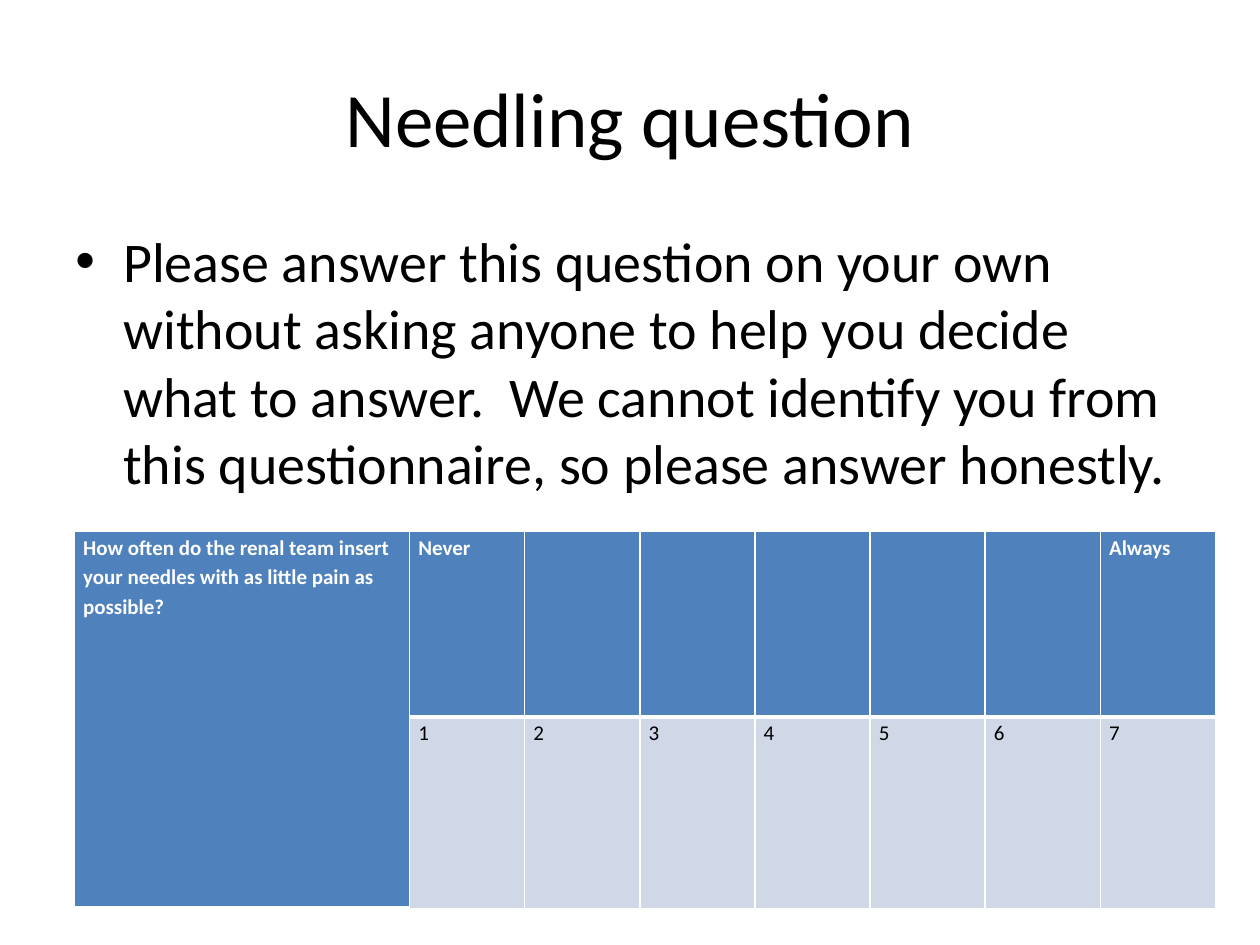
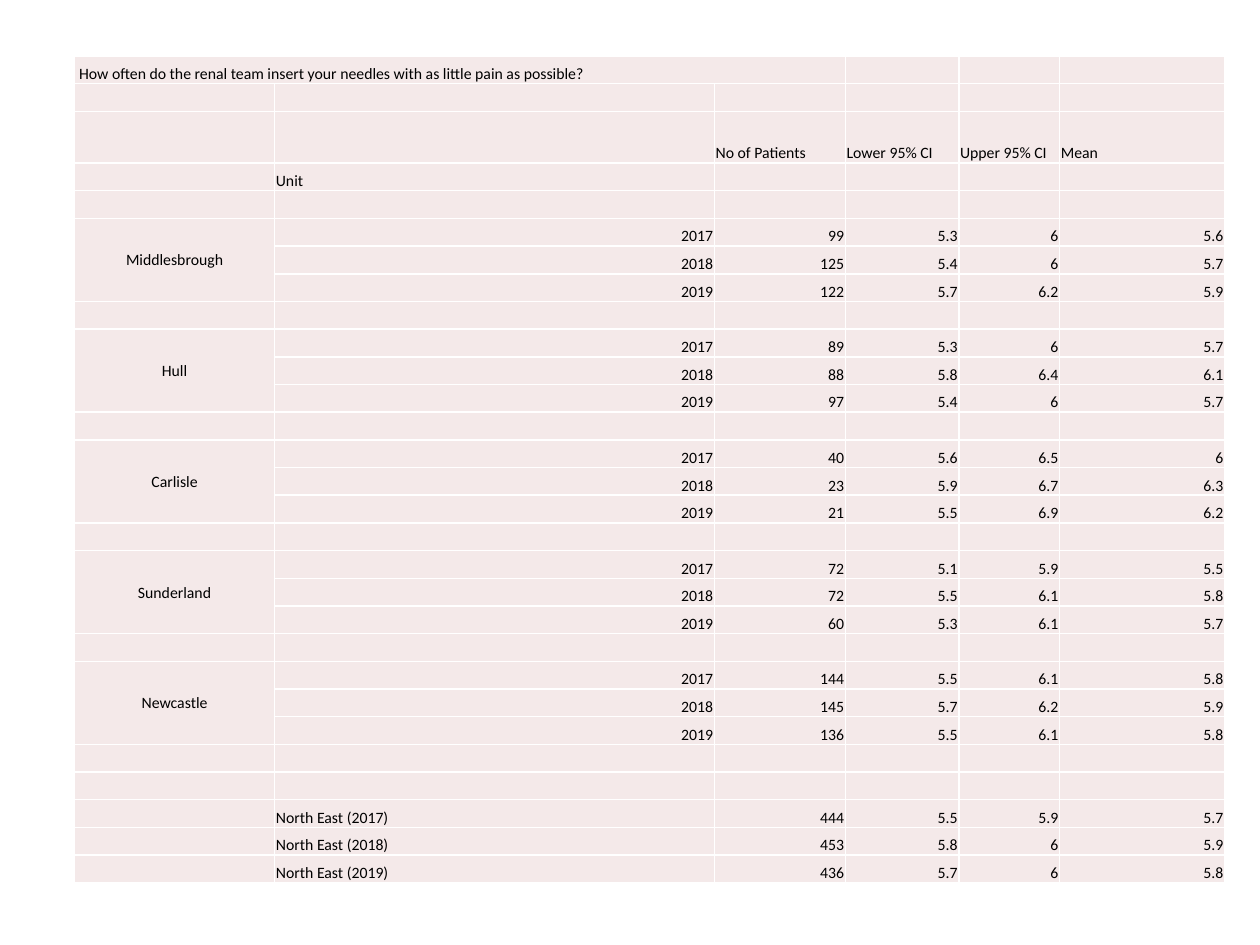
from dataclasses import dataclass, replace

from lxml.etree import SubElement
from pptx import Presentation
from pptx.dml.color import RGBColor
from pptx.enum.text import MSO_ANCHOR, PP_ALIGN
from pptx.oxml.ns import qn
from pptx.util import Inches, Pt

BLACK = RGBColor(0x00, 0x00, 0x00)
WHITE = RGBColor(0xFF, 0xFF, 0xFF)
BLUE = RGBColor(0x4F, 0x81, 0xBD)
PALE_BLUE = RGBColor(0xD0, 0xD8, 0xE8)
PALE_ROSE = RGBColor(0xF4, 0xE9, 0xE9)

FONT = "Calibri"
SLIDE_WIDTH = Inches(10)
SLIDE_HEIGHT = Inches(7.5)
GRID_COLUMNS = 100
GRID_ROWS = 75

QUESTION = "How often do the renal team insert your needles with as little pain as possible?"
INSTRUCTION = (
    "Please answer this question on your own without asking anyone to help you decide "
    "what to answer.  We cannot identify you from this questionnaire, so please answer honestly."
)
SCORES = 7

RESULT_HEADINGS = ["", "", "No of Patients", "Lower 95% CI", "Upper 95% CI", "Mean"]
YEARS = ["2017", "2018", "2019"]
UNITS = {
    "Middlesbrough": [(99, 5.3, 6, 5.6), (125, 5.4, 6, 5.7), (122, 5.7, 6.2, 5.9)],
    "Hull": [(89, 5.3, 6, 5.7), (88, 5.8, 6.4, 6.1), (97, 5.4, 6, 5.7)],
    "Carlisle": [(40, 5.6, 6.5, 6), (23, 5.9, 6.7, 6.3), (21, 5.5, 6.9, 6.2)],
    "Sunderland": [(72, 5.1, 5.9, 5.5), (72, 5.5, 6.1, 5.8), (60, 5.3, 6.1, 5.7)],
    "Newcastle": [(144, 5.5, 6.1, 5.8), (145, 5.7, 6.2, 5.9), (136, 5.5, 6.1, 5.8)],
}
REGION = [(444, 5.5, 5.9, 5.7), (453, 5.8, 6, 5.9), (436, 5.7, 6, 5.8)]


@dataclass(frozen=True)
class CellStyle:
    fill: RGBColor
    color: RGBColor = BLACK
    size: int = 12
    bold: bool = False
    align: PP_ALIGN = PP_ALIGN.LEFT
    anchor: MSO_ANCHOR = MSO_ANCHOR.TOP
    side_inset: float = 0.07
    top_inset: float = 0
    line_spacing: float = 1.0
    bottom_border: int = 1


SCALE_HEADER = CellStyle(BLUE, WHITE, bold=True, line_spacing=1.15, bottom_border=3)
SCALE_SCORE = CellStyle(PALE_BLUE, line_spacing=1.15)
RESULT_LABEL = CellStyle(
    PALE_ROSE, size=9, anchor=MSO_ANCHOR.BOTTOM, side_inset=0.01, top_inset=0.01
)
RESULT_NUMBER = replace(RESULT_LABEL, align=PP_ALIGN.RIGHT)
RESULT_UNIT = replace(RESULT_LABEL, align=PP_ALIGN.CENTER, anchor=MSO_ANCHOR.MIDDLE)


def across(columns):
    return round(SLIDE_WIDTH * columns / GRID_COLUMNS)


def down(rows):
    return round(SLIDE_HEIGHT * rows / GRID_ROWS)


class DeckBuilder:
    def __init__(self):
        self.deck = Presentation()
        self.deck.slide_width = SLIDE_WIDTH
        self.deck.slide_height = SLIDE_HEIGHT
        self.page = None

    def add_page(self):
        self.page = self.deck.slides.add_slide(self.deck.slide_layouts[6])

    def set_text(self, paragraph, text, size, color, bold=False):
        if text:
            paragraph.add_run().text = text
        else:
            SubElement(paragraph._p, qn("a:endParaRPr"), sz=str(size * 100))
        font = paragraph.font
        font.name = FONT
        font.size = Pt(size)
        font.bold = bold
        font.color.rgb = color

    def add_text(self, text, left, top, width, height, size, anchor):
        box = self.page.shapes.add_textbox(
            across(left), down(top), across(width), down(height)
        )
        frame = box.text_frame
        frame.word_wrap = True
        frame.vertical_anchor = anchor
        paragraph = frame.paragraphs[0]
        self.set_text(paragraph, text, size, BLACK)
        return paragraph

    def add_title(self, text):
        paragraph = self.add_text(text, 5, 3, 90, 12.5, 44, MSO_ANCHOR.MIDDLE)
        paragraph.alignment = PP_ALIGN.CENTER

    def add_bullet(self, text):
        paragraph = self.add_text(text, 5, 17.5, 90, 49.5, 32, MSO_ANCHOR.TOP)
        paragraph.space_before = Pt(6.4)
        properties = paragraph._p.get_or_add_pPr()
        indent = Inches(0.38)
        properties.set("marL", str(indent))
        properties.set("indent", str(-indent))
        bullet_font = properties.makeelement(qn("a:buFont"), {"typeface": "Arial"})
        bullet = properties.makeelement(qn("a:buChar"), {"char": "•"})
        default_font = properties.find(qn("a:defRPr"))
        default_font.addprevious(bullet_font)
        default_font.addprevious(bullet)

    def add_border(self, cell, side, width):
        line = SubElement(
            cell._tc.get_or_add_tcPr(), qn(f"a:ln{side}"), w=str(Pt(width))
        )
        fill = SubElement(line, qn("a:solidFill"))
        SubElement(fill, qn("a:srgbClr"), val=str(WHITE))

    def fill_cell(self, cell, text, style):
        for side in "LRT":
            self.add_border(cell, side, 1)
        self.add_border(cell, "B", style.bottom_border)
        cell.fill.solid()
        cell.fill.fore_color.rgb = style.fill
        cell.margin_left = cell.margin_right = Inches(style.side_inset)
        cell.margin_top = Inches(style.top_inset)
        cell.margin_bottom = 0
        cell.vertical_anchor = style.anchor
        paragraph = cell.text_frame.paragraphs[0]
        self.set_text(paragraph, text, style.size, style.color, style.bold)
        paragraph.alignment = style.align
        paragraph.line_spacing = style.line_spacing

    def add_table(self, left, top, widths, heights, texts, style_at, merges, header):
        frame = self.page.shapes.add_table(
            len(heights), len(widths), across(left), down(top),
            across(sum(widths)), down(sum(heights)),
        )
        table = frame.table
        table.first_row = header
        table.horz_banding = False
        for column, width in zip(table.columns, widths):
            column.width = across(width)
        for row, height in zip(table.rows, heights):
            row.height = down(height)
        for first_row, first_column, last_row, last_column in merges:
            table.cell(first_row, first_column).merge(table.cell(last_row, last_column))
        for row in range(len(heights)):
            for column in range(len(widths)):
                text = texts[row][column] if column < len(texts[row]) else ""
                self.fill_cell(table.cell(row, column), text, style_at(row, column, text))


def build_question_page(builder):
    builder.add_page()
    builder.add_title("Needling question")
    builder.add_bullet(INSTRUCTION)
    texts = [
        [QUESTION, "Never"] + [""] * (SCORES - 2) + ["Always"],
        [""] + [str(score) for score in range(1, SCORES + 1)],
    ]

    def style_at(row, column, text):
        return SCALE_HEADER if row == 0 or column == 0 else SCALE_SCORE

    builder.add_table(
        5.9, 42.2, [26.6] + [9.14] * SCORES, [14.7, 15.2],
        texts, style_at, [(0, 0, 1, 0)], header=True,
    )


def result_row(unit, label, figures):
    return [unit, label] + [str(figure) for figure in figures]


def build_results_page(builder):
    builder.add_page()
    texts = [[" " + QUESTION], [], RESULT_HEADINGS, ["", "Unit"], []]
    merges = [(0, 0, 0, 2)]
    for unit, records in UNITS.items():
        first_row = len(texts)
        merges.append((first_row, 0, first_row + len(YEARS) - 1, 0))
        for index, (year, figures) in enumerate(zip(YEARS, records)):
            texts.append(result_row("" if index else unit, year, figures))
        texts.append([])
    texts.append([])
    for year, figures in zip(YEARS, REGION):
        texts.append(result_row("", f"North East ({year})", figures))

    def style_at(row, column, text):
        if text in UNITS:
            return RESULT_UNIT
        return RESULT_NUMBER if text[:1].isdigit() else RESULT_LABEL

    heights = [4.1 if row is RESULT_HEADINGS else 2.2 for row in texts]
    builder.add_table(
        5.9, 4.45, [15.9, 34.9, 10.4, 9, 8, 13.1], heights,
        texts, style_at, merges, header=False,
    )


def main():
    builder = DeckBuilder()
    build_question_page(builder)
    build_results_page(builder)
    builder.deck.save("out.pptx")


if __name__ == "__main__":
    main()
